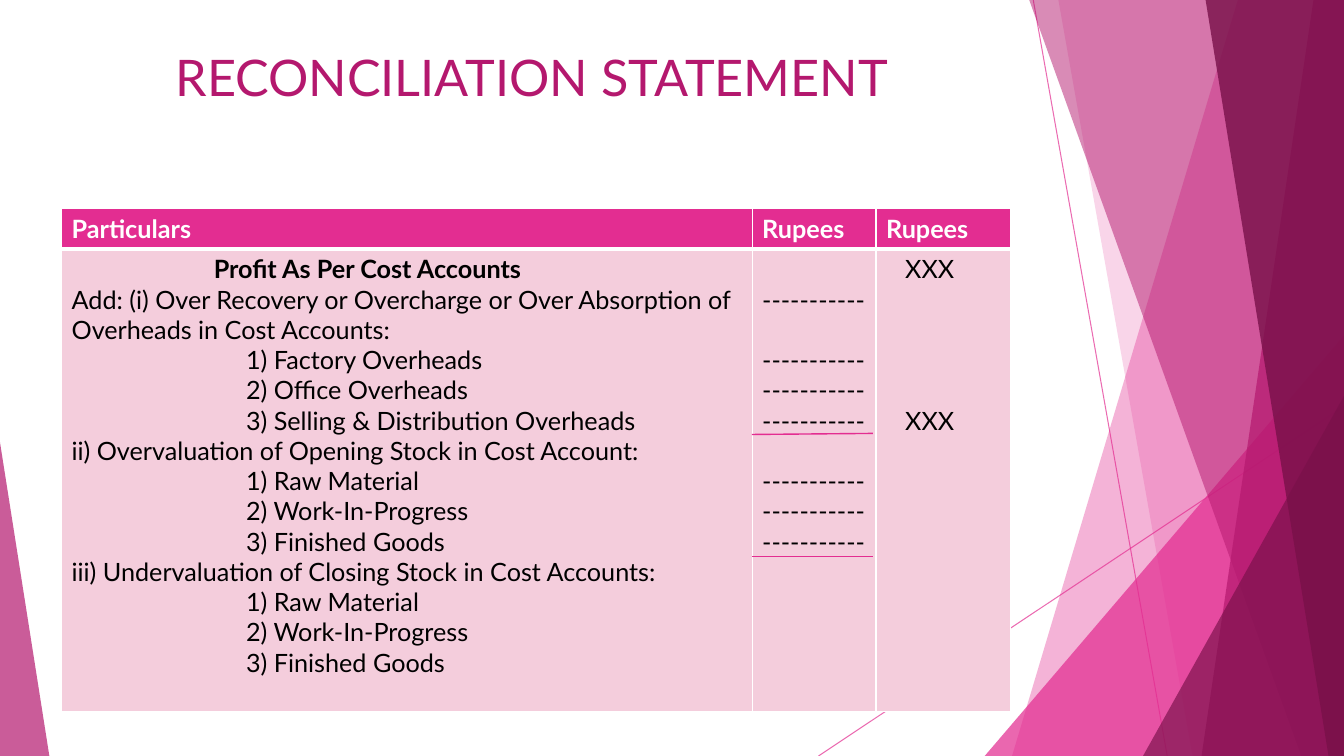
from lxml import etree
from pptx import Presentation
from pptx.dml.color import RGBColor
from pptx.enum.shapes import MSO_CONNECTOR, MSO_SHAPE
from pptx.enum.text import MSO_ANCHOR, MSO_AUTO_SIZE, PP_ALIGN
from pptx.oxml.ns import qn
from pptx.util import Inches, Pt

TRIANGLE = MSO_SHAPE.ISOSCELES_TRIANGLE
STRAIGHT = MSO_CONNECTOR.STRAIGHT
TOP, LEFT = MSO_ANCHOR.TOP, PP_ALIGN.LEFT

WIDTH, HEIGHT = Inches(13.33), Inches(7.5)
FONT = "Lato"
LINE = 21.6  # height of one text line in the table, in points
COLORS = {"pink": "E32D91", "magenta": "B4186E", "plum": "781049",
          "pale": "F4CDDC", "white": "FFFFFF", "black": "000000"}

# Corners as percent of the slide: top left x, bottom left x, colour, opacity
BANDS_BACK = [(92.1, 75.3, "pink", 36), (78.75, 88.73, "pink", 20)]
BANDS_FRONT = [(76.58, 96.82, "magenta", 50), (97.73, 89.4, "magenta", 70),
               (89.7, 98.85, "plum", 80)]

ITEM, HEADING = 1.73, 1.41  # indents in inches
STOCK = ["1) Raw Material", "2) Work-In-Progress", "3) Finished Goods"]
OVERHEADS = ["1) Factory Overheads", "2) Office Overheads",
             "3) Selling & Distribution Overheads"]
SECTIONS = [
    ("Add: (i) Over Recovery or Overcharge or Over Absorption of "
     "Overheads in Cost Accounts:", OVERHEADS),
    ("ii) Overvaluation of Opening Stock in Cost Account:", STOCK),
    ("iii) Undervaluation of Closing Stock in Cost Accounts:", STOCK),
]
DASHES = "-" * 11
DASH_SKIPS = [0, 1, 0, 0, 1, 0, 0]  # empty lines above each dashed amount


def x(percent):
    return round(WIDTH * percent / 100)


def y(percent):
    return round(HEIGHT * percent / 100)


def color(name):
    return RGBColor.from_string(COLORS[name])


def set_alpha(fill, percent):
    clr = fill._xPr.find(".//" + qn("a:srgbClr"))
    etree.SubElement(clr, qn("a:alpha")).set("val", str(percent * 1000))


def paint(shape, name, alpha):
    shape.shadow.inherit = False
    shape.fill.solid()
    shape.fill.fore_color.rgb = color(name)
    set_alpha(shape.fill, alpha)
    shape.line.fill.background()


def add_band(s, top, bottom, name, alpha):
    """Full-height band from a slanted left edge to the slide's right edge."""
    builder = s.shapes.build_freeform(x(top), 0)
    builder.add_line_segments([(WIDTH, 0), (WIDTH, HEIGHT), (x(bottom), HEIGHT)])
    paint(builder.convert_to_shape(), name, alpha)


def add_corner(s, left, top, width, apex, name, alpha):
    """Triangle standing on the slide's bottom edge."""
    shape = s.shapes.add_shape(TRIANGLE, x(left), y(top), x(width), HEIGHT - y(top))
    shape.adjustments[0] = apex
    paint(shape, name, alpha)


def add_line(s, x1, y1, x2, y2, weight=1, alpha=100):
    line = s.shapes.add_connector(STRAIGHT, x(x1), y(y1), x(x2), y(y2))
    line.line.width = Pt(weight)
    line.line.color.rgb = color("pink")
    if alpha < 100:
        set_alpha(line.line.fill, alpha)
    etree.SubElement(line._element.spPr, qn("a:effectLst"))


def write(p, text, size=18, name="black", bold=False, indent=0, skip=0):
    """Fill a paragraph; skip is the number of empty lines above it."""
    p.alignment = LEFT
    p.space_before = Pt(LINE * skip)
    p._p.get_or_add_pPr().set("marL", str(Inches(indent)))
    r = p.add_run()
    r.text = text
    r.font.name = FONT
    r.font.size = Pt(size)
    r.font.bold = bold
    r.font.color.rgb = color(name)


def style_cell(cell, fill, top, bottom):
    tc_pr = cell._tc.get_or_add_tcPr()
    weights = [("L", 1), ("R", 1), ("T", top), ("B", bottom)]
    for i, (side, weight) in enumerate(weights):
        ln = etree.Element(qn("a:ln" + side), w=str(Pt(weight)))
        solid = etree.SubElement(ln, qn("a:solidFill"))
        etree.SubElement(solid, qn("a:srgbClr")).set("val", COLORS["white"])
        tc_pr.insert(i, ln)
    cell.fill.solid()
    cell.fill.fore_color.rgb = color(fill)


def write_cell(cell, entries):
    """Write (text, format) pairs, one paragraph each."""
    tf = cell.text_frame
    for i, (text, fmt) in enumerate(entries):
        write(tf.add_paragraph() if i else tf.paragraphs[0], text, **fmt)


def add_decor(s):
    add_line(s, 76.88, 0, 86.85, 100, weight=0.75, alpha=70)
    add_line(s, 100, 53.73, 60.9, 100, weight=0.75, alpha=70)
    for band in BANDS_BACK:
        add_band(s, *band)
    add_corner(s, 73.27, 44.4, 26.73, 1, "pink", 72)
    for band in BANDS_FRONT:
        add_band(s, *band)
    add_corner(s, 85.05, 52.4, 14.95, 1, "plum", 66)
    add_corner(s, 0, 58.53, 3.67, 0, "magenta", 70)


def add_title(s):
    title = s.shapes.title
    title.left, title.top, title.width, title.height = x(4.58), y(5.47), x(70.5), y(19.2)
    tf = title.text_frame
    tf.auto_size = MSO_AUTO_SIZE.NONE
    tf.vertical_anchor = TOP
    write(tf.paragraphs[0], "RECONCILIATION STATEMENT", size=36, name="magenta", indent=1.03)


def add_statement(s):
    widths, heights = [51.38, 9.22, 9.98], [5.33, 61.2]
    table = s.shapes.add_table(2, 3, x(4.58), y(27.6), x(sum(widths)), y(sum(heights))).table
    for column, width in zip(table.columns, widths):
        column.width = x(width)
    for row, height in zip(table.rows, heights):
        row.height = y(height)

    particulars = [("Profit As Per Cost Accounts", {"bold": True, "indent": HEADING})]
    for heading, items in SECTIONS:
        particulars.append((heading, {}))
        particulars += [(item, {"indent": ITEM}) for item in items]
    amounts = [(DASHES, {"skip": skip}) for skip in DASH_SKIPS]
    totals = [("XXX", {"indent": 0.19, "skip": skip}) for skip in (0, 4)]

    headers = ["Particulars", "Rupees", "Rupees"]
    for col, (header, body) in enumerate(zip(headers, [particulars, amounts, totals])):
        head_cell, body_cell = table.cell(0, col), table.cell(1, col)
        style_cell(head_cell, "pink", 1, 3)
        style_cell(body_cell, "pale", 3, 1)
        write_cell(head_cell, [(header, {"name": "white", "bold": True})])
        write_cell(body_cell, body)
    # The dashed amounts start on the second line of their cell
    table.cell(1, 1).margin_top = Inches(0.05) + Pt(LINE)


def main():
    prs = Presentation()
    prs.slide_width, prs.slide_height = WIDTH, HEIGHT
    s = prs.slides.add_slide(prs.slide_layouts[5])
    add_decor(s)
    add_title(s)
    add_statement(s)
    add_line(s, 55.95, 57.47, 64.95, 57.33)
    add_line(s, 55.95, 73.6, 64.95, 73.6)
    prs.save("out.pptx")


if __name__ == "__main__":
    main()
